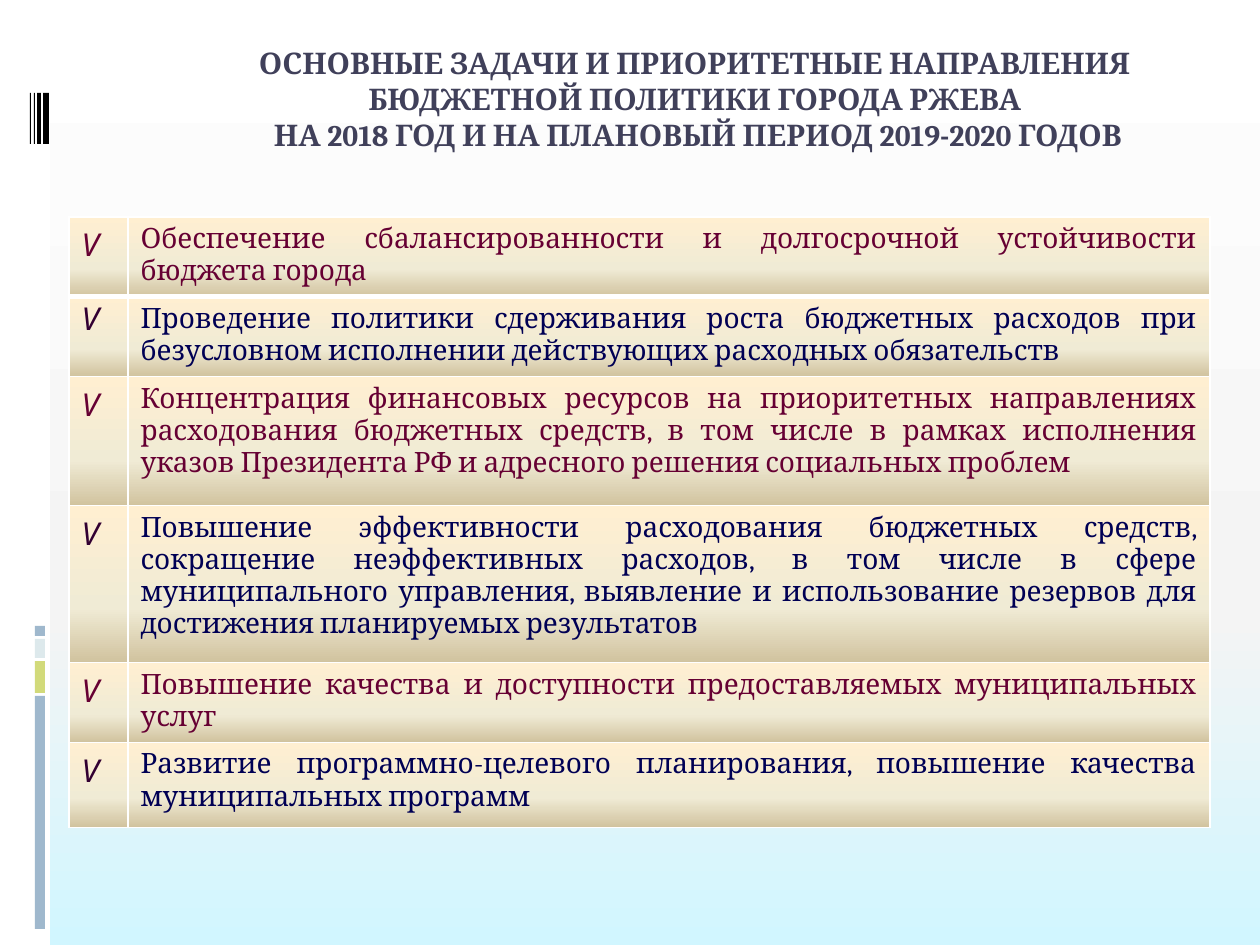
from lxml.etree import SubElement
from pptx import Presentation
from pptx.dml.color import RGBColor
from pptx.enum.shapes import MSO_SHAPE as Preset
from pptx.enum.text import MSO_ANCHOR as Anchor, PP_ALIGN as Align
from pptx.oxml.ns import qn
from pptx.util import Emu, Pt

PX = 914400 // 126
WHITE = RGBColor(0xFF, 0xFF, 0xFF)
BLACK = RGBColor(0, 0, 0)
STEEL = RGBColor(0x9F, 0xB8, 0xCD)
LIME = RGBColor(0xD2, 0xDA, 0x7A)
MIST = RGBColor(0xDD, 0xE9, 0xEC)
SLATE = RGBColor(0x40, 0x40, 0x5A)
MAROON = RGBColor(0x66, 0x00, 0x33)
PLUM = RGBColor(0x32, 0x00, 0x32)
NAVY = RGBColor(0x00, 0x00, 0x54)
SKY_STOPS = ((0, WHITE), (65, RGBColor(0xF4, 0xF4, 0xF4)), (100, RGBColor(0xD1, 0xF6, 0xFF)))
SAND_STOPS = (
    (0, RGBColor(0xFF, 0xEF, 0xD1)),
    (65, RGBColor(0xF0, 0xEB, 0xD5)),
    (100, RGBColor(0xD1, 0xC3, 0x9F)),
)

SIDEBAR = (
    (0, 0, 50, 945, WHITE),
    (43, 93, 6, 51, BLACK),
    (37, 93, 4, 51, BLACK),
    (34, 93, 1, 51, BLACK),
    (30, 93, 1, 51, BLACK),
    (35, 696, 10, 233, STEEL),
    (35, 661, 10, 32, LIME),
    (35, 639, 10, 19, MIST),
    (35, 626, 10, 10, STEEL),
)
TITLE_LINES = (
    "ОСНОВНЫЕ ЗАДАЧИ И ПРИОРИТЕТНЫЕ НАПРАВЛЕНИЯ ",
    "БЮДЖЕТНОЙ ПОЛИТИКИ ГОРОДА РЖЕВА ",
    "НА 2018 ГОД И НА ПЛАНОВЫЙ ПЕРИОД 2019-2020 ГОДОВ",
)
TASKS = (
    (76, "Обеспечение сбалансированности и долгосрочной устойчивости бюджета города"),
    (78, "Проведение политики сдерживания роста бюджетных расходов при безусловном "
         "исполнении действующих расходных обязательств"),
    (129, "Концентрация финансовых ресурсов на приоритетных направлениях расходования "
          "бюджетных средств, в том числе в рамках исполнения указов Президента РФ и "
          "адресного решения социальных проблем"),
    (157, "Повышение эффективности расходования бюджетных средств, сокращение "
          "неэффективных расходов, в том числе в сфере муниципального управления, "
          "выявление и использование резервов для достижения планируемых результатов"),
    (78, "Повышение качества и доступности предоставляемых муниципальных услуг"),
    (85, "Развитие программно-целевого планирования, повышение качества муниципальных программ"),
)
COLUMN_WIDTHS = (59, 1082)


def px(*lengths):
    """Turn pixel lengths into EMU."""
    return [Emu(length * PX) for length in lengths]


def add_color(parent, color):
    """Append an RGB colour element."""
    return SubElement(parent, qn("a:srgbClr"), val=str(color))


def add_gradient(parent, stops):
    """Append a top-to-bottom gradient fill."""
    gradient = SubElement(parent, qn("a:gradFill"), rotWithShape="1")
    stop_list = SubElement(gradient, qn("a:gsLst"))
    for percent, color in stops:
        add_color(SubElement(stop_list, qn("a:gs"), pos=str(percent * 1000)), color)
    SubElement(gradient, qn("a:lin"), ang="5400000", scaled="0")
    return gradient


def add_border(properties, side, points):
    """Append one white cell border."""
    line = SubElement(properties, qn(f"a:ln{side}"), w=str(Pt(points)))
    add_color(SubElement(line, qn("a:solidFill")), WHITE)


def paint_background(slide):
    """Give the slide its sky gradient."""
    slide.background.fill.solid()
    properties = slide.element.find(".//" + qn("p:bgPr"))
    properties.remove(properties[0])
    properties.insert(0, add_gradient(properties, SKY_STOPS))


def add_bar(slide, left, top, width, height, color):
    """Draw one plain sidebar rectangle."""
    bar = slide.shapes.add_shape(Preset.RECTANGLE, *px(left, top, width, height))
    bar.shadow.inherit = False
    bar.fill.solid()
    bar.fill.fore_color.rgb = color
    bar.line.fill.background()


def add_run(paragraph, text, font_name, size, color, bold=False, italic=False):
    """Append a formatted run."""
    run = paragraph.add_run()
    run.text = text
    font = run.font
    font.name, font.size, font.bold, font.italic = font_name, Pt(size), bold, italic
    font.color.rgb = color


def add_title(slide):
    """Add the centred three-line heading."""
    frame = slide.shapes.add_textbox(*px(186, 39, 1024, 137)).text_frame
    frame.word_wrap = True
    frame.vertical_anchor = Anchor.TOP
    heading = frame.paragraphs[0]
    heading.alignment = Align.CENTER
    for number, line in enumerate(TITLE_LINES):
        if number:
            heading.add_line_break()
        add_run(heading, line, "Cambria", 17, SLATE, bold=True)


def fill_cell(cell, text, font_name, size, color, italic, top_width, bottom_width):
    """Write a justified cell and style its borders and fill."""
    paragraph = cell.text_frame.paragraphs[0]
    paragraph.alignment = Align.JUSTIFY
    add_run(paragraph, text, font_name, size, color, italic=italic)
    properties = cell._tc.get_or_add_tcPr()
    for side, points in (("L", 1), ("R", 1), ("T", top_width), ("B", bottom_width)):
        add_border(properties, side, points)
    add_gradient(properties, SAND_STOPS)


def add_task_table(slide):
    """Add the table of check marks and budget tasks."""
    height = sum(row_height for row_height, _ in TASKS)
    frame = slide.shapes.add_table(
        len(TASKS), len(COLUMN_WIDTHS), *px(69, 217, sum(COLUMN_WIDTHS), height))
    table = frame.table
    table.first_row = table.horz_banding = False
    for column, width in zip(table.columns, px(*COLUMN_WIDTHS)):
        column.width = width
    for index, (row_height, task) in enumerate(TASKS):
        row = table.rows[index]
        row.height, = px(row_height)
        mark_color, task_color = (PLUM, NAVY) if index % 2 else (MAROON, MAROON)
        borders = (3 if index == 1 else 1, 3 if index == 0 else 1)
        mark_cell, task_cell = row.cells
        fill_cell(mark_cell, "V", "Noto Sans", 18, mark_color, True, *borders)
        fill_cell(task_cell, task, "Cambria", 16, task_color, False, *borders)
    table.cell(1, 0).margin_top = 0


def main():
    """Build and save the slide."""
    deck = Presentation()
    deck.slide_width, deck.slide_height = px(1260, 945)
    slide = deck.slides.add_slide(deck.slide_layouts[6])
    paint_background(slide)
    for bar in SIDEBAR:
        add_bar(slide, *bar)
    add_title(slide)
    add_task_table(slide)
    deck.save("out.pptx")


if __name__ == "__main__":
    main()
